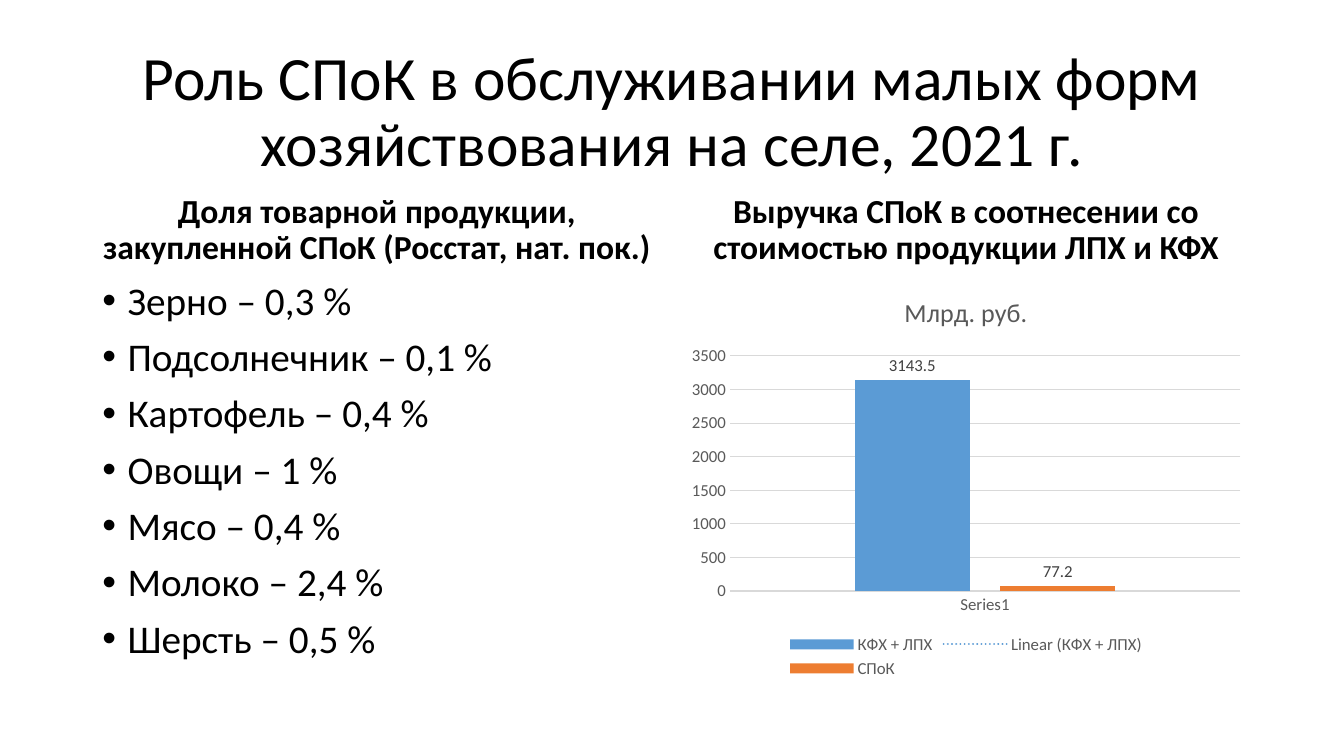
from lxml.etree import SubElement
from pptx import Presentation
from pptx.chart.data import CategoryChartData
from pptx.dml.color import RGBColor
from pptx.enum.chart import XL_CHART_TYPE, XL_LABEL_POSITION, XL_LEGEND_POSITION, XL_TICK_MARK
from pptx.enum.text import MSO_ANCHOR, PP_ALIGN
from pptx.oxml import parse_xml
from pptx.oxml.ns import nsdecls, qn
from pptx.util import Pt

BLACK = RGBColor(0x00, 0x00, 0x00)
AXIS_GREY = RGBColor(0x59, 0x59, 0x59)
LABEL_GREY = RGBColor(0x40, 0x40, 0x40)
GRID_GREY = RGBColor(0xD9, 0xD9, 0xD9)
BLUE = RGBColor(0x5B, 0x9B, 0xD5)
ORANGE = RGBColor(0xED, 0x7D, 0x31)
FONT = "Calibri"

PRODUCTS = [
    "Зерно – 0,3 %", "Подсолнечник – 0,1 %", "Картофель – 0,4 %", "Овощи – 1 %",
    "Мясо – 0,4 %", "Молоко – 2,4 %", "Шерсть – 0,5 %",
]
REVENUE = [("КФХ + ЛПХ", 3143.5, BLUE), ("СПоК", 77.2, ORANGE)]
HEADING_HEIGHT = 64.9

TITLE = {"size": Pt(44)}
HEADING = {"size": Pt(24), "bold": True}
LIST = {"size": Pt(28)}


def set_font(font, color, **values):
    for name, value in {"name": FONT, **values}.items():
        setattr(font, name, value)
    font.color.rgb = color


def set_line(line, color):
    line.color.rgb = color
    line.width = Pt(0.75)


def add_text(page, box, lines, style, before=0, bulleted=False):
    frame = page.shapes.add_textbox(*map(Pt, box)).text_frame
    frame.word_wrap = True
    frame.vertical_anchor = MSO_ANCHOR.TOP if bulleted else MSO_ANCHOR.MIDDLE
    for number, line in enumerate(lines):
        para = frame.add_paragraph() if number else frame.paragraphs[0]
        para.alignment = PP_ALIGN.LEFT if bulleted else PP_ALIGN.CENTER
        para.line_spacing = 0.9
        para.space_before = Pt(before)
        span = para.add_run()
        span.text = line
        set_font(span.font, BLACK, **style)
        if bulleted:
            props = para._p.get_or_add_pPr()
            props.set("marL", str(Pt(18)))
            props.set("indent", str(-Pt(18)))
            SubElement(props, qn("a:buFont")).set("typeface", "Arial")
            SubElement(props, qn("a:buChar")).set("char", "•")


def add_trend_line(series, color):
    trend = parse_xml(
        f'<c:trendline {nsdecls("c", "a")}><c:spPr><a:ln w="{Pt(1.5)}" cap="rnd">'
        f'<a:solidFill><a:srgbClr val="{color}"/></a:solidFill>'
        '<a:prstDash val="sysDot"/></a:ln></c:spPr><c:trendlineType val="linear"/>'
        '<c:dispRSqr val="0"/><c:dispEq val="0"/></c:trendline>'
    )
    series._element.find(qn("c:cat")).addprevious(trend)


def add_revenue_chart(page, box):
    data = CategoryChartData()
    data.categories = ["Series1"]
    for name, value, _ in REVENUE:
        data.add_series(name, [value])
    chart = page.shapes.add_chart(XL_CHART_TYPE.COLUMN_CLUSTERED, *map(Pt, box), data).chart
    set_font(chart.font, BLACK, size=Pt(10))

    # Title and legend
    chart.has_title = True
    para = chart.chart_title.text_frame.paragraphs[0]
    span = para.add_run()
    span.text = "Млрд. руб."
    set_font(span.font, AXIS_GREY, size=Pt(18.6), bold=False)
    chart.has_legend = True
    chart.legend.position = XL_LEGEND_POSITION.BOTTOM
    chart.legend.include_in_layout = False
    set_font(chart.legend.font, AXIS_GREY, size=Pt(12))

    # Axes
    for axis in (chart.category_axis, chart.value_axis):
        axis.major_tick_mark = axis.minor_tick_mark = XL_TICK_MARK.NONE
        set_font(axis.tick_labels.font, AXIS_GREY, size=Pt(12))
    set_line(chart.category_axis.format.line, GRID_GREY)
    chart.value_axis.format.line.fill.background()
    set_line(chart.value_axis.major_gridlines.format.line, GRID_GREY)

    # Columns
    plot = chart.plots[0]
    for name, value in {"gap_width": 219, "overlap": -27, "vary_by_categories": False}.items():
        setattr(plot, name, value)
    for series, (_, _, color) in zip(plot.series, REVENUE):
        series.format.fill.solid()
        series.format.fill.fore_color.rgb = color
        labels = series.data_labels
        labels.show_value = True
        labels.position = XL_LABEL_POSITION.OUTSIDE_END
        set_font(labels.font, LABEL_GREY, size=Pt(12))
    add_trend_line(plot.series[0], BLUE)


def add_column(page, box, heading):
    """Place the heading and return the box left below it."""
    left, top, width, height = box
    add_text(page, (left, top, width, HEADING_HEIGHT), [heading], HEADING, before=10)
    return left, top + HEADING_HEIGHT, width, height - HEADING_HEIGHT


def main():
    deck = Presentation()
    deck.slide_width, deck.slide_height = Pt(960), Pt(540)
    page = deck.slides.add_slide(deck.slide_layouts[6])

    add_text(page, (66.1, 28.75, 828, 104.4),
             ["Роль СПоК в обслуживании малых форм хозяйствования на селе, 2021 г."], TITLE)

    # Left column: shares of produce
    list_box = add_column(page, (66.1, 132.4, 406.15, 355),
                          "Доля товарной продукции, закупленной СПоК (Росстат, нат. пок.)")
    add_text(page, list_box, PRODUCTS, LIST, before=10, bulleted=True)

    # Right column: revenue
    chart_box = add_column(page, (486, 132.4, 408.1, 355),
                           "Выручка СПоК в соотнесении со стоимостью продукции ЛПХ и КФХ")
    add_revenue_chart(page, chart_box)

    deck.save("out.pptx")


if __name__ == "__main__":
    main()
